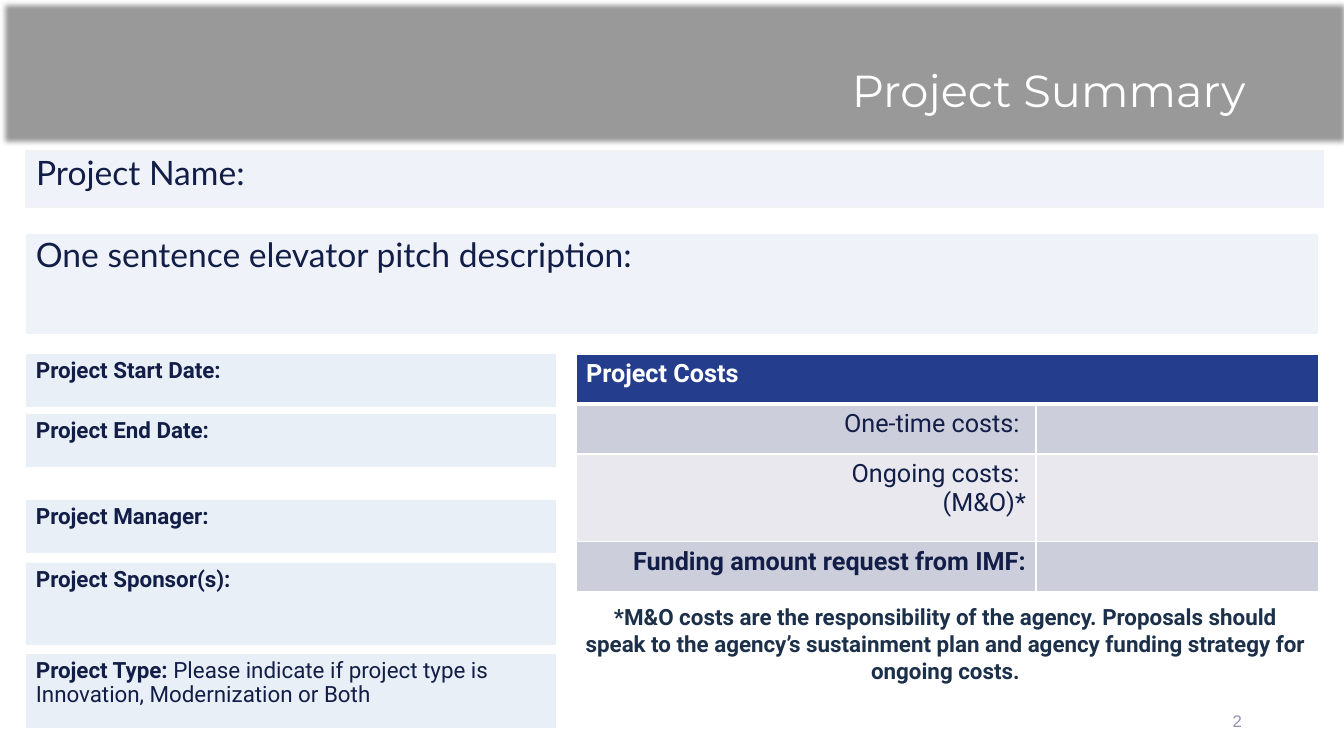
from lxml.etree import SubElement
from pptx import Presentation
from pptx.dml.color import RGBColor as Rgb
from pptx.enum.shapes import MSO_SHAPE as Form
from pptx.enum.text import MSO_ANCHOR as Anchor, MSO_AUTO_SIZE as Auto, PP_ALIGN as Align
from pptx.oxml.ns import qn
from pptx.util import Emu, Pt

HUE = {
    "band": "999999", "pale": "E1E9F5", "edge": "F2F2F2", "ink": "121E47",
    "note": "1C304A", "head": "253D8D", "odd": "CDCEDB", "even": "E8E8EE",
    "white": "FFFFFF", "page": "8E92B3",
}
LARGE = {"name": "Lato", "size": 24, "color": "ink"}
LABEL = {"name": "Roboto", "size": 16, "color": "ink", "bold": True}
PLAIN = {**LABEL, "bold": False}
NOTE = {**LABEL, "color": "note"}
HEAD = {**LABEL, "size": 18, "color": "white"}
COST = {**PLAIN, "size": 18}
TOTAL = {**COST, "bold": True}
BANNER = {"name": "Montserrat", "size": 32, "color": "white"}
PAGE = {"name": "Arial", "size": 12, "color": "page"}


def px(n):
    """Turn pixels into EMU."""
    return Emu(round(n * 914400 / 100.8))


def rgb(key):
    """Look up a colour."""
    return Rgb.from_string(HUE[key])


def style(font, form):
    """Apply a dict of format values to a font."""
    for key, val in form.items():
        if key == "color":
            font.color.rgb = rgb(val)
        else:
            setattr(font, key, Pt(val) if key == "size" else val)


def write(frame, lines, align=Align.LEFT, space=None):
    """Write lines, each a list of (text, format) runs."""
    for i, runs in enumerate(lines):
        para = frame.add_paragraph() if i else frame.paragraphs[0]
        para.alignment = align
        if space:
            para.line_spacing = space
        for text, form in runs:
            run = para.add_run()
            run.text = text
            style(run.font, form)


def paint(shape, key, alpha=100):
    """Give a shape a flat fill with no line or shadow."""
    shape.shadow.inherit = False
    shape.fill.solid()
    shape.fill.fore_color.rgb = rgb(key)
    shape.line.fill.background()
    tone = shape.element.spPr.find(".//" + qn("a:srgbClr"))
    SubElement(tone, qn("a:alpha"), val=str(alpha * 1000))


def place(shape, box):
    """Move a shape to a pixel box."""
    for key, val in zip(("left", "top", "width", "height"), box):
        setattr(shape, key, px(val))


def label(slide, box, runs, align=Align.LEFT, anchor=Anchor.MIDDLE, pad=5, space=None):
    """Add a wrapped text box."""
    frame = slide.shapes.add_textbox(*map(px, box)).text_frame
    frame.word_wrap = True
    frame.vertical_anchor = anchor
    frame.margin_top = frame.margin_bottom = px(pad)
    write(frame, [runs], align, space)


def banner(slide, box, text):
    """Draw the soft-edged band with its heading."""
    x, y, w, h = box
    band = slide.shapes.add_shape(Form.RECTANGLE, *map(px, box))
    paint(band, "band")
    glow = band.element.spPr.find(qn("a:effectLst"))
    SubElement(glow, qn("a:softEdge"), rad=str(px(5)))
    label(slide, (x + 842, y + 50, w - 900, h - 60), [(text, BANNER)], space=0.9)


def panel(shape, runs, alpha):
    """Fill a pale panel and write in its top left corner."""
    paint(shape, "pale", alpha)
    frame = shape.text_frame
    frame.word_wrap = True
    frame.auto_size = Auto.NONE
    frame.vertical_anchor = Anchor.TOP
    write(frame, [runs], space=0.9)


def intro(slide, box):
    """Place the project name and the pitch panel."""
    x, y, w, h = box
    title = slide.shapes.title
    place(title, (x, y, w, 57))
    panel(title, [("Project Name:", LARGE)], 50)
    title.line.color.rgb = rgb("edge")
    title.line.width = Pt(0.75)
    pitch = slide.shapes.add_shape(
        Form.RECTANGLE, *map(px, (x, y + h - 100, w - 6, 100)))
    panel(pitch, [("One sentence elevator pitch description:", LARGE)], 50)


def facts(slide, box):
    """Stack the fact panels down the left side."""
    x, y, w, h = box
    kind = "Please indicate if project type is Innovation, Modernization or Both"
    rows = [
        (0, 53, [("Project Start Date:", LABEL)]),
        (60, 53, [("Project End Date:", LABEL)]),
        (146, 53, [("Project Manager:", LABEL)]),
        (209, 82, [("Project Sponsor(s):", LABEL)]),
        (h - 74, 74, [("Project Type: ", LABEL), (kind, PLAIN)]),
    ]
    for top, tall, runs in rows:
        card = slide.shapes.add_shape(Form.RECTANGLE, *map(px, (x, y + top, w, tall)))
        panel(card, runs, 70)


def border(cell, low):
    """Rule a cell in white, with a given bottom width."""
    props = cell._tc.get_or_add_tcPr()
    for side, wide in (("L", 1), ("R", 1), ("T", 1), ("B", low)):
        line = SubElement(props, qn("a:ln" + side), w=str(Pt(wide)))
        fill = SubElement(line, qn("a:solidFill"))
        SubElement(fill, qn("a:srgbClr"), val=HUE["white"])


def costs(slide, box):
    """Draw the cost table and the note below it."""
    x, y, w, h = box
    rows = [
        (50, "head", [[("Project Costs", HEAD)]]),
        (50, "odd", [[("One-time costs: ", COST)]]),
        (88, "even", [[("Ongoing costs: ", COST)], [("(M&O)*", COST)]]),
        (50, "odd", [[("Funding amount request from IMF:", TOTAL)]]),
    ]
    tall = sum(row[0] for row in rows)
    grid = slide.shapes.add_table(len(rows), 2, *map(px, (x, y, w, tall))).table
    for col, wide in zip(grid.columns, (460, w - 460)):
        col.width = px(wide)
    for r, (high, key, lines) in enumerate(rows):
        grid.rows[r].height = px(high)
        for cell in grid.rows[r].cells:
            border(cell, 1 if r else 3)
            cell.fill.solid()
            cell.fill.fore_color.rgb = rgb(key)
        write(grid.cell(r, 0).text_frame, lines, Align.RIGHT if r else Align.LEFT)
    grid.cell(0, 0).merge(grid.cell(0, 1))
    note = ("*M&O costs are the responsibility of the agency. Proposals should speak to "
            "the agency’s sustainment plan and agency funding strategy for ongoing costs.")
    label(slide, (x - 2, y + tall + 1, w, h - tall), [(note, NOTE)],
          Align.CENTER, Anchor.TOP, 10)


def main():
    """Build the project summary slide."""
    deck = Presentation()
    deck.slide_width, deck.slide_height = px(1344), px(756)
    slide = deck.slides.add_slide(deck.slide_layouts[5])
    banner(slide, (0, 0, 1350, 147), "Project Summary")
    intro(slide, (26, 151, 1298, 183))
    facts(slide, (26, 354, 530, 374))
    costs(slide, (576, 354, 743, 361))
    label(slide, (950, 701, 302, 40), [("2", PAGE)], Align.RIGHT)
    deck.save("out.pptx")


if __name__ == "__main__":
    main()
